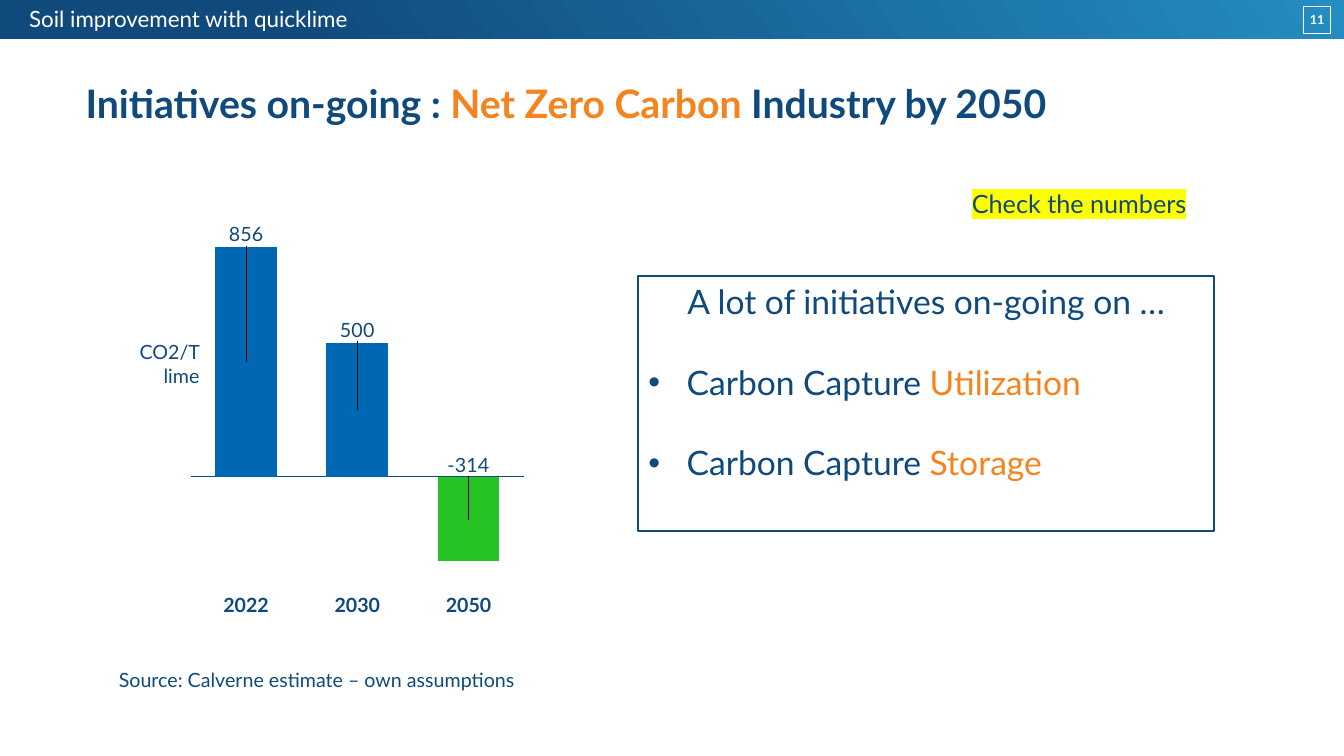
from lxml.etree import SubElement
from pptx import Presentation
from pptx.chart.data import CategoryChartData
from pptx.dml.color import RGBColor
from pptx.enum.chart import XL_CHART_TYPE, XL_TICK_LABEL_POSITION, XL_TICK_MARK
from pptx.enum.shapes import MSO_CONNECTOR, MSO_SHAPE
from pptx.enum.text import MSO_ANCHOR, PP_ALIGN
from pptx.oxml import parse_xml
from pptx.oxml.ns import nsdecls, qn
from pptx.util import Inches, Pt

COLORS = {
    "navy": "10497C",
    "sky": "248DC1",
    "orange": "F58420",
    "bar": "0067B3",
    "green": "27C223",
    "white": "FFFFFF",
    "yellow": "FFFF00",
}
FONT = "Lato"
WIDTH, HEIGHT = Inches(13.33), Inches(7.5)
EMISSIONS = {"2022": 856, "2030": 500, "2050": -314}
PLOT = {"x": 0.026, "y": 0.076, "w": 0.948, "h": 0.851}
LABEL_GAP = 0.035


def rgb(name):
    return RGBColor.from_string(COLORS[name])


def place(left, top, width, height):
    return (int(WIDTH * left / 100), int(HEIGHT * top / 100),
            int(WIDTH * width / 100), int(HEIGHT * height / 100))


def style(font, size, color="navy", bold=False):
    font.name, font.size, font.bold = FONT, Pt(size), bold
    font.color.rgb = rgb(color)


def fill_paragraph(paragraph, parts, size, color="navy", bold=False, align=PP_ALIGN.LEFT):
    paragraph.alignment = align
    style(paragraph.font, size, color, bold)
    for words, tint in parts:
        run = paragraph.add_run()
        run.text = words
        if tint != color:
            run.font.color.rgb = rgb(tint)


def set_frame(frame, insets=(0.1, 0.05, 0.1, 0.05), anchor=MSO_ANCHOR.TOP, wrap=True):
    frame.margin_left, frame.margin_top, frame.margin_right, frame.margin_bottom = map(Inches, insets)
    frame.vertical_anchor = anchor
    frame.word_wrap = wrap


def add_text(slide, box, parts, size, color="navy", bold=False, align=PP_ALIGN.LEFT, **frame_options):
    frame = slide.shapes.add_textbox(*place(*box)).text_frame
    set_frame(frame, **frame_options)
    fill_paragraph(frame.paragraphs[0], parts, size, color, bold, align)
    return frame.paragraphs[0]


def add_rectangle(slide, box):
    rectangle = slide.shapes.add_shape(MSO_SHAPE.RECTANGLE, *place(*box))
    rectangle.shadow.inherit = False
    rectangle.fill.background()
    return rectangle


def add_header(slide, box, topic, number):
    left, top, width, height = box
    band = add_rectangle(slide, box)
    band.line.fill.background()
    band.fill.gradient()
    band.fill.gradient_angle = 215
    for stop, color, position in zip(band.fill.gradient_stops, ("sky", "navy"), (0, 0.8)):
        stop.color.rgb = rgb(color)
        stop.position = position

    x, y, span, rise = place(*box)
    rule = slide.shapes.add_connector(MSO_CONNECTOR.STRAIGHT, x, y + rise, x + span, y + rise)
    rule.line.color.rgb = rgb("white")
    rule.line.width = Pt(1.5)
    SubElement(rule.element.spPr, qn("a:effectLst"))

    page = add_rectangle(slide, (left + 0.97 * width, top + 0.15 * height, 0.02 * width, 0.68 * height))
    page.line.color.rgb = rgb("white")
    page.line.width = Pt(0.25)
    set_frame(page.text_frame, (0, 0, 0, 0), MSO_ANCHOR.MIDDLE)
    fill_paragraph(page.text_frame.paragraphs[0], [(number, "white")], 9, "white", True, PP_ALIGN.CENTER)

    heading = add_text(slide, (left + 1.43, top + 0.27, 0.95 * width, 0.92 * height), [(topic, "white")],
                       16, "white", insets=(0.1, 0, 0, 0), anchor=MSO_ANCHOR.MIDDLE)
    heading.line_spacing = 0.9


def plot_layout(**values):
    entries = "".join(f'<c:{key} val="{value}"/>' for key, value in values.items())
    return parse_xml(f'<c:layout {nsdecls("c")}><c:manualLayout>{entries}</c:manualLayout></c:layout>')


def add_emissions(slide, box):
    left, top, width, height = box
    years, amounts = list(EMISSIONS), list(EMISSIONS.values())
    data = CategoryChartData()
    data.categories = years
    data.add_series("CO2/T lime", amounts)
    chart = slide.shapes.add_chart(XL_CHART_TYPE.COLUMN_STACKED, *place(*box), data).chart
    style(chart.font, 14)
    chart.has_legend = False
    chart.has_title = False

    lowest, highest = min(amounts), max(amounts)
    amount_axis, year_axis = chart.value_axis, chart.category_axis
    amount_axis.minimum_scale, amount_axis.maximum_scale = lowest, highest
    amount_axis.has_major_gridlines = False
    amount_axis.visible = False
    year_axis.tick_label_position = XL_TICK_LABEL_POSITION.NONE
    year_axis.major_tick_mark = XL_TICK_MARK.NONE
    year_axis.format.line.color.rgb = rgb("navy")
    year_axis.format.line.width = Pt(0.75)

    columns = chart.plots[0]
    columns.gap_width, columns.overlap, columns.vary_by_categories = 80, 100, False
    series = columns.series[0]
    series.invert_if_negative = False
    series.format.fill.solid()
    series.format.fill.fore_color.rgb = rgb("bar")
    for index, amount in enumerate(amounts):
        style(series.points[index].data_label.font, 14)
        if amount < 0:
            fill = series.points[index].format.fill
            fill.solid()
            fill.fore_color.rgb = rgb("green")

    for label, amount in zip(chart.element.xpath(".//c:dLbl"), amounts):
        lift = abs(amount) / (highest - lowest) * PLOT["h"] / 2 + LABEL_GAP
        label.insert(1, plot_layout(x=0, y=round(-lift, 3)))
    plot_area = chart.element.xpath(".//c:plotArea")[0]
    for old_layout in plot_area.findall(qn("c:layout")):
        plot_area.remove(old_layout)
    plot_area.insert(0, plot_layout(layoutTarget="inner", xMode="edge", yMode="edge", **PLOT))

    year_width, row = 3.83, 3.07
    for index, year in enumerate(years):
        center = left + width * (PLOT["x"] + PLOT["w"] * (index + 0.5) / len(years))
        add_text(slide, (center - year_width / 2, top + height + 0.53, year_width, row), [(year, "navy")],
                 14, bold=True, align=PP_ALIGN.CENTER, insets=(0, 0, 0, 0), wrap=False)
    add_text(slide, (left - 5.85, top + 0.36 * height, 7.2, row), [("CO2/T lime", "navy")], 14,
             align=PP_ALIGN.RIGHT, insets=(0, 0, 0, 0), anchor=MSO_ANCHOR.MIDDLE, wrap=False)
    add_text(slide, (left - 5.4, top + 1.2 * height, 47.5, 7.6),
             [("Source: Calverne estimate – own assumptions", "navy")], 14)


def add_initiatives(slide, box):
    panel = add_rectangle(slide, box)
    panel.line.color.rgb = rgb("navy")
    panel.line.width = Pt(1.5)
    frame = panel.text_frame
    set_frame(frame)
    fill_paragraph(frame.paragraphs[0], [("A lot of initiatives on-going on …", "navy")], 24,
                   align=PP_ALIGN.CENTER)
    for outcome in ("Utilization", "Storage"):
        initiative = frame.add_paragraph()
        properties = initiative._p.get_or_add_pPr()
        properties.set("marL", str(Inches(0.38)))
        properties.set("indent", str(-Inches(0.38)))
        initiative.space_before = Pt(28.8)
        SubElement(properties, qn("a:buFont"), typeface="Arial")
        SubElement(properties, qn("a:buChar"), char="•")
        fill_paragraph(initiative, [("Carbon Capture ", "navy"), (outcome, "orange")], 24)


def add_reminder(slide, box):
    reminder = add_text(slide, box, [("Check the numbers", "navy")], 18, wrap=False).runs[0]
    reminder.font.color.rgb = rgb("navy")
    highlight = SubElement(reminder._r.get_or_add_rPr(), qn("a:highlight"))
    SubElement(highlight, qn("a:srgbClr"), val=COLORS["yellow"])


def main():
    deck = Presentation()
    deck.slide_width, deck.slide_height = WIDTH, HEIGHT
    slide = deck.slides.add_slide(deck.slide_layouts[6])
    add_header(slide, (0, 0, 100, 5.33), "Soil improvement with quicklime", "11")
    add_text(slide, (5.63, 9.87, 86.5, 7.6),
             [("Initiatives on-going : ", "navy"), ("Net Zero Carbon ", "orange"),
              ("Industry by 2050", "navy")], 28, bold=True)
    add_emissions(slide, (13.5, 28.93, 26.18, 48.93))
    add_initiatives(slide, (47.5, 36.53, 42.83, 33.73))
    add_reminder(slide, (71.57, 24.27, 17.63, 5.33))
    deck.save("out.pptx")


if __name__ == "__main__":
    main()
